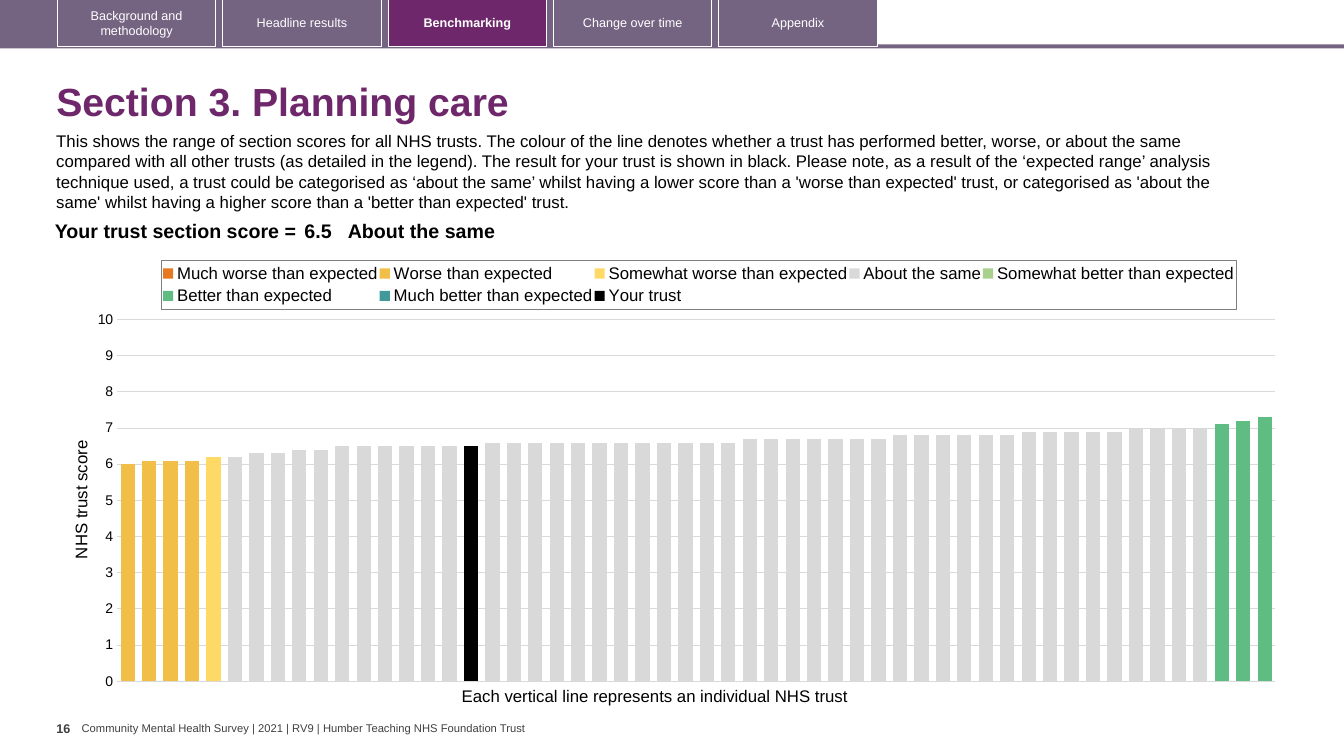
from copy import deepcopy

from lxml import etree
from pptx import Presentation
from pptx.chart.data import CategoryChartData
from pptx.dml.color import RGBColor
from pptx.enum import chart as charts, shapes, text
from pptx.oxml import parse_xml
from pptx.util import Inches, Pt

PLUM = RGBColor(0x6D, 0x27, 0x6A)
MAUVE = RGBColor(0x75, 0x63, 0x82)
WHITE = RGBColor(0xFF, 0xFF, 0xFF)
BLACK = RGBColor(0, 0, 0)
CHARCOAL = RGBColor(0x40, 0x40, 0x40)
GRID = RGBColor(0xD9, 0xD9, 0xD9)
FRAME = RGBColor(0x7F, 0x7F, 0x7F)
FONT = "Arial"
CHART_URI = "http://schemas.openxmlformats.org/drawingml/2006/chart"
DRAWING_URI = "http://schemas.openxmlformats.org/drawingml/2006/main"
C = "{%s}" % CHART_URI

TABS = ["Background and methodology", "Headline results", "Benchmarking",
        "Change over time", "Appendix"]
INTRO = (
    "This shows the range of section scores for all NHS trusts. The colour of the line denotes "
    "whether a trust has performed better, worse, or about the same compared with all other "
    "trusts (as detailed in the legend). The result for your trust is shown in black. Please "
    "note, as a result of the ‘expected range’ analysis technique used, a trust could be "
    "categorised as ‘about the same’ whilst having a lower score than a 'worse than expected' "
    "trust, or categorised as 'about the same' whilst having a higher score than a 'better than "
    "expected' trust.")

TRUST_COUNT = 54
ABOUT_THE_SAME = ([6.2] + [6.3] * 2 + [6.4] * 2 + [6.5] * 7 + [6.6] * 12
                  + [6.7] * 7 + [6.8] * 6 + [6.9] * 5 + [7] * 4)
# Name, colour, position of the first trust, scores
BANDS = [
    ("Much worse than expected", RGBColor(0xE8, 0x77, 0x22), 0, []),
    ("Worse than expected", RGBColor(0xF1, 0xBE, 0x48), 0, [6, 6.1, 6.1, 6.1]),
    ("Somewhat worse than expected", RGBColor(0xFF, 0xD9, 0x66), 4, [6.2]),
    ("About the same", GRID, 5, ABOUT_THE_SAME),
    ("Somewhat better than expected", RGBColor(0xA9, 0xD1, 0x8E), 0, []),
    ("Better than expected", RGBColor(0x5F, 0xBD, 0x83), 51, [7.1, 7.2, 7.3]),
    ("Much better than expected", RGBColor(0x41, 0x99, 0x99), 0, []),
    ("Your trust", BLACK, 16, [6.5]),
]


def style_font(font, size, color=BLACK, bold=False):
    font.name, font.size, font.bold = FONT, Pt(size), bold
    font.color.rgb = color


def write(frame, words, size, color=BLACK, bold=False, align=text.PP_ALIGN.LEFT,
          anchor=text.MSO_ANCHOR.TOP, insets=(0.1, 0.05), line_spacing=None):
    frame.word_wrap = True
    frame.vertical_anchor = anchor
    frame.margin_left = frame.margin_right = Inches(insets[0])
    frame.margin_top = frame.margin_bottom = Inches(insets[1])
    paragraph = frame.paragraphs[0]
    paragraph.alignment = align
    paragraph.line_spacing = line_spacing
    run = paragraph.add_run()
    run.text = words
    style_font(run.font, size, color, bold)


def add_text(slide, box, words, size, **formats):
    shape = slide.shapes.add_textbox(*map(Inches, box))
    write(shape.text_frame, words, size, **formats)


def add_box(slide, box, fill=None, line=None):
    shape = slide.shapes.add_shape(shapes.MSO_SHAPE.RECTANGLE, *map(Inches, box))
    shape.shadow.inherit = False
    if fill is None:
        shape.fill.background()
    else:
        shape.fill.solid()
        shape.fill.fore_color.rgb = fill
    if line is None:
        shape.line.fill.background()
    else:
        shape.line.color.rgb = line
        shape.line.width = Pt(0.75)
    return shape


def set_layout(element, index, size, place, inner=False):
    """Fix a chart part at a place (x, y, w, h) in inches, in a chart of the given size."""
    for old in element.findall(C + "layout"):
        element.remove(old)
    layout = etree.Element(C + "layout")
    manual = etree.SubElement(layout, C + "manualLayout")
    values = {"layoutTarget": "inner"} if inner else {}
    values.update(xMode="edge", yMode="edge")
    values.update((name, length / size[name in "yh"]) for name, length in zip("xywh", place))
    for name, value in values.items():
        etree.SubElement(manual, C + name).set("val", str(value))
    element.insert(index, layout)


def move_last_series_to_right_axis(plot_area):
    left_bars = plot_area.find(C + "barChart")
    right_bars = deepcopy(left_bars)
    left_bars.remove(left_bars.findall(C + "ser")[-1])
    for series in right_bars.findall(C + "ser")[:-1]:
        right_bars.remove(series)
    left_bars.addnext(right_bars)

    category_axis, value_axis = plot_area.find(C + "catAx"), plot_area.find(C + "valAx")
    right_category, right_value = deepcopy(category_axis), deepcopy(value_axis)
    value_axis.addnext(right_value)
    right_value.addnext(right_category)
    ids = {category_axis.find(C + "axId").get("val"): "5001",
           value_axis.find(C + "axId").get("val"): "5002"}
    for part in (right_bars, right_category, right_value):
        for reference in part.findall(C + "axId") + part.findall(C + "crossAx"):
            reference.set("val", ids[reference.get("val")])
    for name in ("majorGridlines", "title"):
        right_value.remove(right_value.find(C + name))
    for name, value in (("axPos", "r"), ("tickLblPos", "none"), ("crosses", "max")):
        right_value.find(C + name).set("val", value)


def add_navigation(slide, box, active):
    left, top, width, height = box
    add_box(slide, (left, top + 0.44, width, 0.04), fill=MAUVE)
    add_box(slide, (left, top, 8.7, height), fill=MAUVE)
    for index, name in enumerate(TABS):
        current = name == active
        tab = add_box(slide, (left + 0.57 + 1.64 * index, top - 0.01, 1.57, height),
                      fill=PLUM if current else None, line=WHITE)
        write(tab.text_frame, name, 9, color=WHITE, bold=current,
              align=text.PP_ALIGN.CENTER, anchor=text.MSO_ANCHOR.MIDDLE)


def add_heading(slide, box):
    left, top, width, height = box
    add_text(slide, (left, top, width, 0.72), "Section 3. Planning care", 28, color=PLUM,
             bold=True, anchor=text.MSO_ANCHOR.MIDDLE, line_spacing=0.9)
    add_text(slide, (left, top + 0.58, 12.13, height - 0.58), INTRO, 12)


def add_score_table(slide, box):
    table = slide.shapes.add_table(1, 3, *map(Inches, box)).table
    table.first_row = table.horz_banding = False
    cells = [("Your trust section score =", 2.63, text.PP_ALIGN.RIGHT, 0.04),
             ("6.5", 0.47, text.PP_ALIGN.LEFT, 0.04),
             ("About the same", 8.59, text.PP_ALIGN.LEFT, 0)]
    for index, (words, width, align, inset) in enumerate(cells):
        table.columns[index].width = Inches(width)
        cell = table.cell(0, index)
        cell.fill.background()
        cell.margin_left = cell.margin_right = Inches(inset)
        cell.margin_top = cell.margin_bottom = Inches(0.04)
        paragraph = cell.text_frame.paragraphs[0]
        paragraph.text = words
        paragraph.alignment = align
        style_font(paragraph.runs[0].font, 14, bold=True)


def add_score_chart(slide, box):
    left, top, width, height = box
    size = (width, height)
    data = CategoryChartData()
    data.categories = [str(number + 1) for number in range(TRUST_COUNT)]
    for name, _, first, scores in BANDS:
        after = TRUST_COUNT - first - len(scores)
        data.add_series(name, [None] * first + scores + [None] * after)
    chart = slide.shapes.add_chart(charts.XL_CHART_TYPE.COLUMN_CLUSTERED,
                                   *map(Inches, box), data).chart
    style_font(chart.font, 10)
    chart.has_title = False

    # Columns
    plot = chart.plots[0]
    plot.gap_width, plot.overlap, plot.vary_by_categories = 50, 100, False
    for series, (_, color, _, _) in zip(plot.series, BANDS):
        series.format.fill.solid()
        series.format.fill.fore_color.rgb = color
    plot_area = chart.element.chart.plotArea
    set_layout(plot_area, 0, size, (0.49, 0.7, 11.49, 3.59), inner=True)

    # Axes
    chart.category_axis.visible = False
    axis = chart.value_axis
    axis.minimum_scale, axis.maximum_scale, axis.major_unit = 0, 10, 1
    axis.major_tick_mark = axis.minor_tick_mark = charts.XL_TICK_MARK.NONE
    axis.tick_label_position = charts.XL_TICK_LABEL_POSITION.NEXT_TO_AXIS
    axis.crosses = charts.XL_AXIS_CROSSES.AUTOMATIC
    axis.tick_labels.number_format = "0"
    axis.tick_labels.number_format_is_linked = False
    style_font(axis.tick_labels.font, 10)
    axis.format.line.fill.background()
    axis.major_gridlines.format.line.color.rgb = GRID
    axis.major_gridlines.format.line.width = Pt(0.75)
    title = axis.axis_title
    title.text_frame.text = "NHS trust score"
    style_font(title.text_frame.paragraphs[0].runs[0].font, 12)
    set_layout(title._element, 1, size, (0, 1.87))
    move_last_series_to_right_axis(plot_area)

    # Legend
    chart.has_legend = True
    legend = chart.legend
    legend.position = charts.XL_LEGEND_POSITION.TOP
    legend.include_in_layout = False
    style_font(legend.font, 12)
    set_layout(legend._element, 1, size, (0.93, 0.11, 10.66, 0.49))
    legend._element.find(C + "overlay").addnext(parse_xml(
        f'<c:spPr xmlns:c="{CHART_URI}" xmlns:a="{DRAWING_URI}"><a:ln w="9525"><a:solidFill>'
        f'<a:srgbClr val="{FRAME}"/></a:solidFill></a:ln></c:spPr>'))

    # Caption under the columns
    add_text(slide, (left + 3.81, top + height - 0.16, 4.11, 0.3),
             "Each vertical line represents an individual NHS trust", 12)


def add_footer(slide, box):
    left, top, width, height = box
    add_text(slide, (left, top, 0.25, height), "16", 9, color=CHARCOAL, bold=True,
             insets=(0, 0.05))
    add_text(slide, (left + 0.25, top + 0.06, width - 0.25, 0.13),
             "Community Mental Health Survey | 2021 | RV9 | Humber Teaching NHS Foundation Trust",
             8, color=CHARCOAL, anchor=text.MSO_ANCHOR.MIDDLE, insets=(0, 0))


def main():
    presentation = Presentation()
    presentation.slide_width, presentation.slide_height = Inches(13.33), Inches(7.5)
    slide = presentation.slides.add_slide(presentation.slide_layouts[6])
    add_navigation(slide, (0, 0, 13.33, 0.47), active="Benchmarking")
    add_heading(slide, (0.46, 0.67, 12.49, 1.49))
    add_score_chart(slide, (0.67, 2.47, 12.15, 4.44))
    add_score_table(slide, (0.35, 2.15, 11.69, 0.31))
    add_footer(slide, (0.56, 7.1, 4.73, 0.4))
    presentation.save("out.pptx")


if __name__ == "__main__":
    main()
